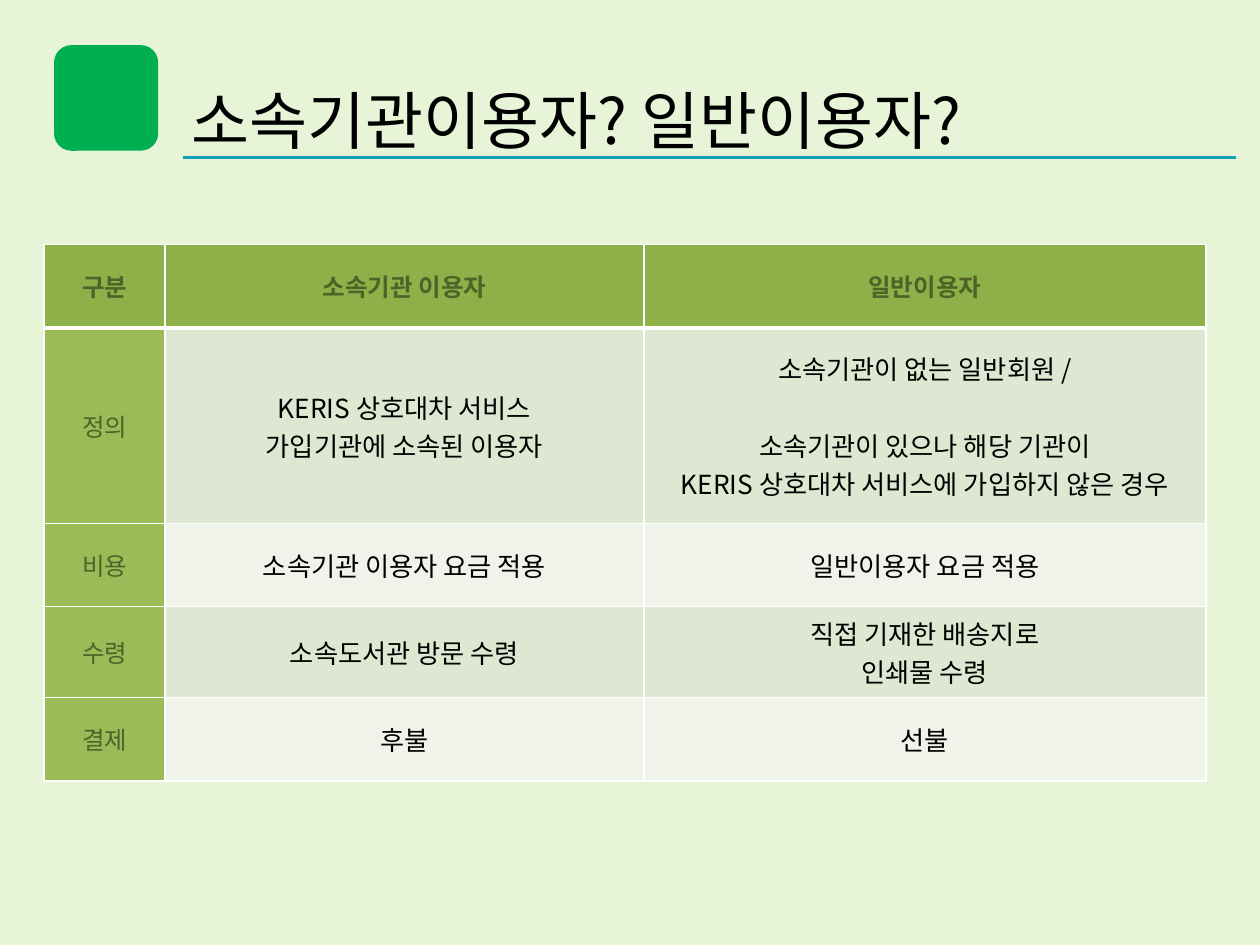
from lxml import etree
from pptx import Presentation
from pptx import util as u
from pptx.dml.color import RGBColor
from pptx.enum import shapes, text
from pptx.oxml.ns import qn

FONT = "Noto Sans CJK KR"
BLACK = RGBColor(0x00, 0x00, 0x00)
WHITE = RGBColor(0xFF, 0xFF, 0xFF)
BACKGROUND = RGBColor(0xE7, 0xF4, 0xD8)
BADGE = RGBColor(0x00, 0xB0, 0x50)
RULE = RGBColor(0x12, 0xA0, 0xB4)
HEADING_FILL = RGBColor(0x8E, 0xB0, 0x48)
LABEL_FILL = RGBColor(0x9B, 0xBB, 0x59)
LABEL_TEXT = RGBColor(0x4F, 0x62, 0x28)
BAND_FILLS = (RGBColor(0xDE, 0xE7, 0xD1), RGBColor(0xEF, 0xF3, 0xEA))

TITLE = "소속기관이용자? 일반이용자?"
COLUMN_WIDTHS = (2.44, 9.65, 11.33)
ROW_HEIGHTS = (1.68, 3.94, 1.68, 1.83, 1.68)
# Each cell is a list of paragraphs; GAP_BEFORE names those set one line lower.
ROWS = (
    (["구분"], ["소속기관 이용자"], ["일반이용자"]),
    (["정의"],
     ["KERIS 상호대차 서비스", "가입기관에 소속된 이용자"],
     ["소속기관이 없는 일반회원 /", "소속기관이 있으나 해당 기관이",
      "KERIS 상호대차 서비스에 가입하지 않은 경우"]),
    (["비용"], ["소속기관 이용자 요금 적용"], ["일반이용자 요금 적용"]),
    (["수령"], ["소속도서관 방문 수령"], ["직접 기재한 배송지로", "인쇄물 수령"]),
    (["결제"], ["후불"], ["선불"]),
)
GAP_BEFORE = {"소속기관이 있으나 해당 기관이"}


def format_paragraph(paragraph, size, color, alignment, bold=False):
    paragraph.alignment = alignment
    font = paragraph.font
    font.name = FONT
    font.size = u.Pt(size)
    font.bold = bold
    font.color.rgb = color
    properties = paragraph._p.pPr.find(qn("a:defRPr"))
    etree.SubElement(properties, qn("a:ea"), typeface=FONT)


def set_borders(cell, bottom_width):
    """Draw white borders; must run before the cell is filled."""
    properties = cell._tc.get_or_add_tcPr()
    for side, width in (("L", 1), ("R", 1), ("T", 1), ("B", bottom_width)):
        line = etree.SubElement(properties, qn(f"a:ln{side}"), w=str(u.Pt(width)))
        fill = etree.SubElement(line, qn("a:solidFill"))
        etree.SubElement(fill, qn("a:srgbClr"), val=str(WHITE))


def add_header(slide, left, top, width):
    badge = slide.shapes.add_shape(
        shapes.MSO_SHAPE.ROUNDED_RECTANGLE,
        u.Cm(left), u.Cm(top), u.Cm(2.1), u.Cm(2.13))
    badge.shadow.inherit = False
    badge.fill.solid()
    badge.fill.fore_color.rgb = BADGE
    badge.line.fill.background()

    rule_y = u.Cm(top + 2.26)
    rule = slide.shapes.add_connector(
        shapes.MSO_CONNECTOR.STRAIGHT,
        u.Cm(left + 2.59), rule_y, u.Cm(left + width), rule_y)
    rule.line.color.rgb = RULE
    rule.line.width = u.Pt(1.5)
    etree.SubElement(rule._element.spPr, qn("a:effectLst"))

    title = slide.shapes.title
    title.left, title.top = u.Cm(left + 2.52), u.Cm(top + 0.64)
    title.width, title.height = u.Cm(width - 2.8), u.Cm(1.7)
    frame = title.text_frame
    frame.text = TITLE
    frame.auto_size = text.MSO_AUTO_SIZE.NONE
    frame.vertical_anchor = text.MSO_ANCHOR.MIDDLE
    format_paragraph(frame.paragraphs[0], 36, BLACK, text.PP_ALIGN.LEFT)


def fill_cell(cell, lines, row, column):
    is_heading = row == 0
    is_label = is_heading or column == 0
    set_borders(cell, 3 if is_heading else 1)
    cell.fill.solid()
    if is_heading:
        cell.fill.fore_color.rgb = HEADING_FILL
    elif is_label:
        cell.fill.fore_color.rgb = LABEL_FILL
    else:
        cell.fill.fore_color.rgb = BAND_FILLS[(row - 1) % 2]
    cell.vertical_anchor = text.MSO_ANCHOR.MIDDLE
    cell.margin_left = cell.margin_right = u.Cm(0.18)
    cell.margin_top = cell.margin_bottom = u.Cm(0.1)

    cell.text = "\n".join(lines)
    size, color = (14, LABEL_TEXT) if is_label else (15, BLACK)
    for line, paragraph in zip(lines, cell.text_frame.paragraphs):
        if line in GAP_BEFORE:
            paragraph.space_before = u.Pt(22)
        format_paragraph(paragraph, size, color, text.PP_ALIGN.CENTER, is_heading)


def add_comparison_table(slide, left, top):
    table = slide.shapes.add_table(
        len(ROWS), len(COLUMN_WIDTHS), u.Cm(left), u.Cm(top),
        u.Cm(sum(COLUMN_WIDTHS)), u.Cm(sum(ROW_HEIGHTS))).table
    for column, width in zip(table.columns, COLUMN_WIDTHS):
        column.width = u.Cm(width)
    for row, height in zip(table.rows, ROW_HEIGHTS):
        row.height = u.Cm(height)
    for row, cells in enumerate(ROWS):
        for column, lines in enumerate(cells):
            fill_cell(table.cell(row, column), lines, row, column)


def main():
    presentation = Presentation()
    presentation.slide_width = u.Cm(25.4)
    presentation.slide_height = u.Cm(19.05)
    slide = presentation.slides.add_slide(presentation.slide_layouts[5])
    slide.background.fill.solid()
    slide.background.fill.fore_color.rgb = BACKGROUND
    add_header(slide, left=1.09, top=0.91, width=23.83)
    add_comparison_table(slide, left=0.89, top=4.93)
    presentation.save("out.pptx")


if __name__ == "__main__":
    main()
